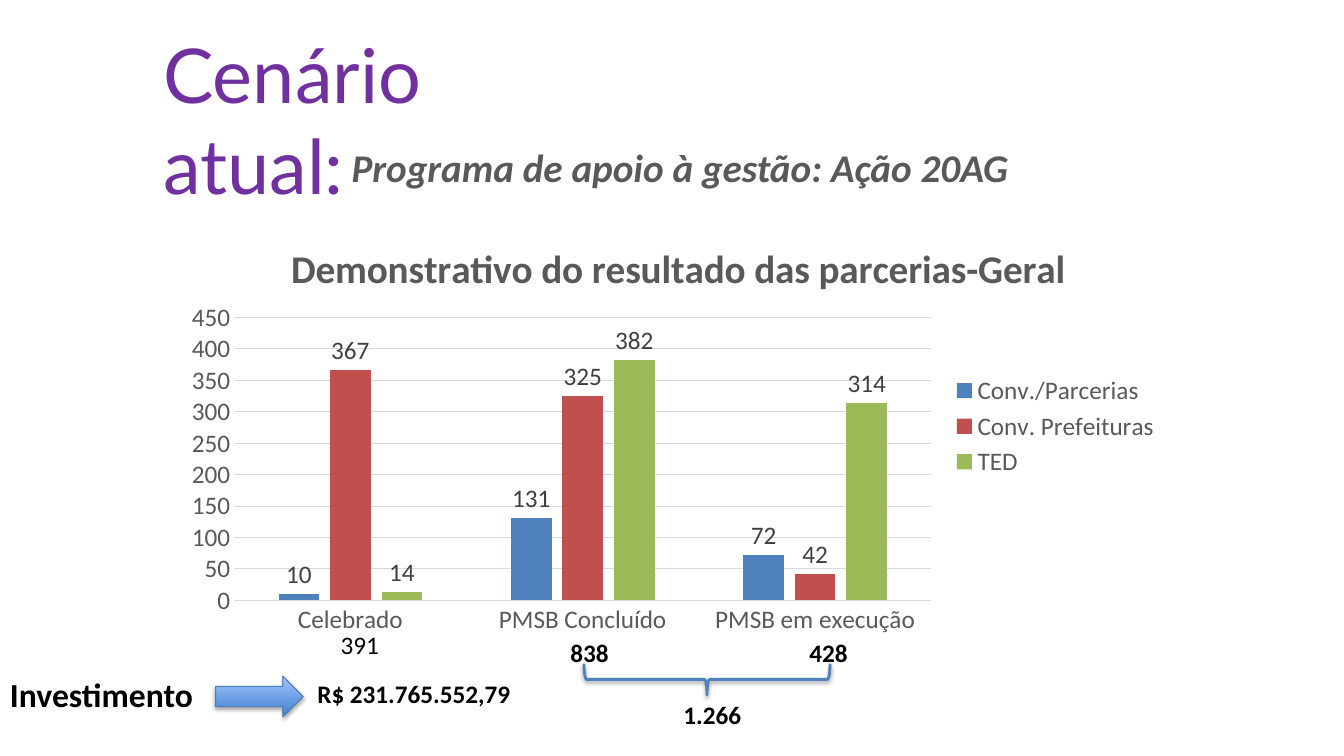
from dataclasses import dataclass

from lxml.etree import SubElement
from pptx import Presentation
from pptx.chart.data import CategoryChartData as ChartData
from pptx.dml.color import RGBColor as RGB
from pptx.enum.chart import XL_CHART_TYPE as CHART, XL_LABEL_POSITION as LABEL
from pptx.enum.chart import XL_LEGEND_POSITION as LEGEND, XL_TICK_MARK as TICK
from pptx.enum.shapes import MSO_SHAPE as SHAPE
from pptx.enum.text import MSO_ANCHOR as ANCHOR, PP_ALIGN as ALIGN
from pptx.oxml import parse_xml
from pptx.oxml.ns import nsdecls, qn
from pptx.util import Pt


@dataclass(frozen=True)
class Theme:
    font: str = "Calibri"
    head_font: str = "Lato"
    head: str = "7030A0"
    ink: str = "000000"
    grey: str = "595959"
    label: str = "404040"
    grid: str = "D9D9D9"
    paper: str = "FFFFFF"
    brace: str = "4F81BD"
    edge: str = "4B7EBC"
    arrow: tuple = ("3F80CE", "A4C4FF")
    bars: tuple = ("4F81BD", "C0504D", "9BBB59")
    huge: int = 54
    large: int = 28
    medium: int = 24
    small: int = 18


THEME = Theme()


def color(code):
    return RGB.from_string(code)


def style(font, size, code, bold=False, italic=False, name=THEME.font):
    font.name, font.size = name, Pt(size)
    font.bold, font.italic = bold, italic
    font.color.rgb = color(code)


def write(shape, text, size, code, align=ALIGN.LEFT, wrap=False, **look):
    frame = shape.text_frame
    frame.word_wrap = wrap
    frame.vertical_anchor = ANCHOR.TOP
    para = frame.paragraphs[0]
    para.alignment = align
    run = para.add_run()
    run.text = text
    style(run.font, size, code, **look)


def place(shape, box):
    shape.left, shape.top, shape.width, shape.height = map(Pt, box)


def add_title(slide, text, box):
    title = slide.shapes.title
    place(title, box)
    write(title, text, THEME.huge, THEME.head, wrap=True, name=THEME.head_font)
    # The title overlaps the banner, so it goes in front.
    title.element.getparent().append(title.element)


def add_note(slide, text, box, size=THEME.small, bold=True):
    note = slide.shapes.add_textbox(*map(Pt, box))
    write(note, text, size, THEME.ink, bold=bold)


def add_shape(slide, kind, box):
    shape = slide.shapes.add_shape(kind, *map(Pt, box))
    shape.shadow.inherit = False
    return shape


def add_banner(slide, text, box):
    banner = add_shape(slide, SHAPE.RECTANGLE, box)
    banner.fill.solid()
    banner.fill.fore_color.rgb = color(THEME.paper)
    banner.line.fill.background()
    write(banner, text, THEME.large, THEME.grey, ALIGN.CENTER, True,
          bold=True, italic=True)


def outline(shape, code, width):
    shape.line.color.rgb = color(code)
    shape.line.width = Pt(width)


def cast(shape, alpha, dist):
    """Give the shape a soft shadow straight below it."""
    effects = shape.element.spPr.find(qn("a:effectLst"))
    shade = SubElement(effects, qn("a:outerShdw"), blurRad=str(Pt(3.1)),
                       dist=str(Pt(dist)), dir="5400000", rotWithShape="0")
    tone = SubElement(shade, qn("a:srgbClr"), val=THEME.ink)
    SubElement(tone, qn("a:alpha"), val=str(alpha * 1000))


def add_brace(slide, box):
    brace = add_shape(slide, SHAPE.LEFT_BRACE, box)
    brace.rotation = 270
    brace.fill.background()
    outline(brace, THEME.brace, 2)
    cast(brace, 38, 1.6)


def add_arrow(slide, box):
    arrow = add_shape(slide, SHAPE.RIGHT_ARROW, box)
    arrow.fill.gradient()
    arrow.fill.gradient_angle = 90
    for stop, code in zip(arrow.fill.gradient_stops, THEME.arrow):
        stop.color.rgb = color(code)
    outline(arrow, THEME.edge, 0.75)
    cast(arrow, 35, 1.8)


def lay_out(part, **spots):
    """Fix a chart part at fractions of the chart's size."""
    old = part.find(qn("c:layout"))
    if old is not None:
        part.remove(old)
    inner = '<c:layoutTarget val="inner"/>' if "w" in spots else ""
    modes = "".join(f'<c:{key}Mode val="edge"/>' for key in "xy")
    sizes = "".join(f'<c:{key} val="{val}"/>' for key, val in spots.items())
    layout = parse_xml(f'<c:layout {nsdecls("c")}><c:manualLayout>{inner}'
                       f'{modes}{sizes}</c:manualLayout></c:layout>')
    text = part.find(qn("c:tx"))
    part.insert(0 if text is None else 1, layout)


def style_axes(chart):
    for axis in (chart.category_axis, chart.value_axis):
        axis.major_tick_mark = axis.minor_tick_mark = TICK.NONE
        style(axis.tick_labels.font, THEME.small, THEME.grey)
    outline_axis = chart.category_axis.format.line
    scale = chart.value_axis
    scale.minimum_scale, scale.maximum_scale, scale.major_unit = 0, 450, 50
    scale.format.line.fill.background()
    for line in (outline_axis, scale.major_gridlines.format.line):
        line.color.rgb = color(THEME.grid)
        line.width = Pt(0.75)


def add_chart(slide, title, groups, series, box):
    data = ChartData()
    data.categories = groups
    for name, values in series:
        data.add_series(name, values)
    chart = slide.shapes.add_chart(CHART.COLUMN_CLUSTERED, *map(Pt, box),
                                   data).chart
    style(chart.font, THEME.small, THEME.ink)
    run = chart.chart_title.text_frame.paragraphs[0].add_run()
    run.text = title
    style(run.font, THEME.large, THEME.grey, bold=True)
    chart.chart_title.include_in_layout = False
    chart.has_legend = True
    chart.legend.position = LEGEND.RIGHT
    chart.legend.include_in_layout = False
    style(chart.legend.font, THEME.small, THEME.grey)
    style_axes(chart)
    plot = chart.plots[0]
    plot.gap_width, plot.overlap, plot.vary_by_categories = 219, -27, False
    for bars, code in zip(plot.series, THEME.bars):
        bars.format.fill.solid()
        bars.format.fill.fore_color.rgb = color(code)
        labels = bars.data_labels
        labels.show_value = True
        labels.position = LABEL.OUTSIDE_END
        style(labels.font, THEME.small, THEME.label)
    root = chart.element.chart
    lay_out(root.find(qn("c:title")), x=0.11, y=0.06)
    lay_out(root.plotArea, x=0.06, y=0.25, w=0.7, h=0.65)


def main():
    deck = Presentation()
    deck.slide_width, deck.slide_height = Pt(960), Pt(540)
    slide = deck.slides.add_slide(deck.slide_layouts[5])
    add_banner(slide, "Programa de apoio à gestão: Ação 20AG",
               (139.7, 98.6, 692, 41))
    add_chart(slide, "Demonstrativo do resultado das parcerias-Geral",
              ("Celebrado", "PMSB Concluído", "PMSB em execução"),
              (("Conv./Parcerias", (10, 131, 72)),
               ("Conv. Prefeituras", (367, 325, 42)),
               ("TED", (14, 382, 314))),
              (124.6, 149, 711.4, 311))
    add_note(slide, "391", (236.2, 445.7, 45.4, 29), bold=False)
    add_note(slide, "838", (400.3, 451.4, 45.4, 29))
    add_note(slide, "428", (571, 451.4, 45.4, 29))
    add_brace(slide, (493.9, 397.4, 22.3, 175.7))
    add_note(slide, "1.266", (481, 496, 62, 29))
    add_title(slide, "Cenário atual:", (109.4, 16.6, 315.4, 72.7))
    add_note(slide, "R$ 231.765.552,79", (219.6, 481, 152.6, 29))
    add_note(slide, "Investimento", (0, 478, 152.6, 36), size=THEME.medium)
    add_arrow(slide, (154, 483, 62.6, 29))
    deck.save("out.pptx")


if __name__ == "__main__":
    main()
